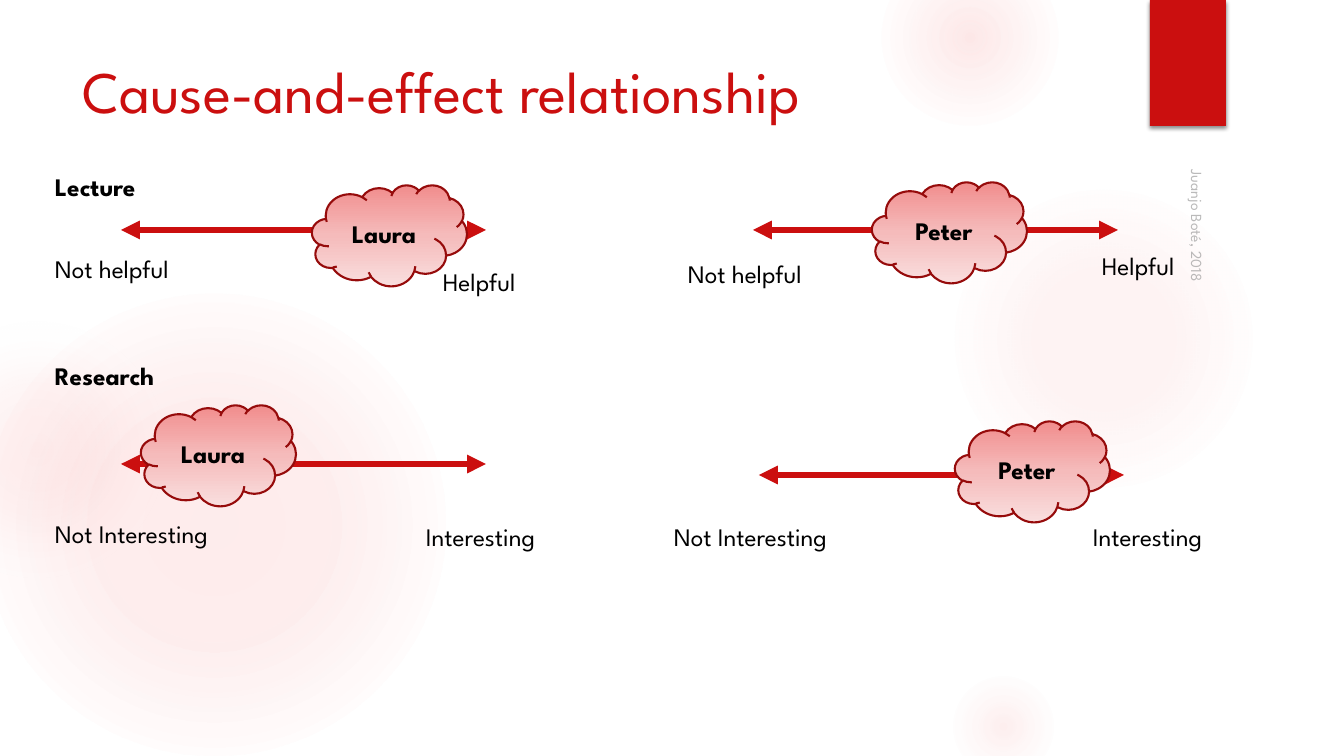
"""Build the cause-and-effect slide with its four opinion scales."""
from pptx import Presentation
from pptx.dml.color import RGBColor
from pptx.enum.shapes import MSO_CONNECTOR as Connector, MSO_SHAPE as Preset
from pptx.enum.text import MSO_ANCHOR as Anchor, MSO_AUTO_SIZE as AutoSize, PP_ALIGN as Align
from pptx.oxml import parse_xml
from pptx.oxml.ns import nsdecls, qn
from pptx.util import Emu, Pt

EMU_PER_PX = 914400 / 100.8
FONT = "League Spartan"
COLORS = {
    "accent": "CB0F0F", "outline": "960B0B", "text": "000000", "credit": "8C8C8C",
    "glow": "F35C5C", "haze": "F3F3F3",
    "cloud_top": "F18D8D", "cloud_middle": "F5BBBB", "cloud_bottom": "F9DEDE",
}
CLOUD_STOPS = [(0, "cloud_top", 100), (50, "cloud_middle", 100), (100, "cloud_bottom", 100)]
LINEAR = '<a:lin ang="5400000" scaled="0"/>'
RADIAL = '<a:path path="circle"><a:fillToRect l="50000" t="50000" r="50000" b="50000"/></a:path>'
GLOWS = [
    (-17, 294, 462, [(0, "glow", 11), (36, "glow", 10), (75, "glow", 0)]),
    (-93, 320, 260, [(0, "glow", 8), (36, "glow", 5), (71, "haze", 0)]),
    (949, 184, 310, [(0, "glow", 7), (36, "glow", 6), (69, "glow", 0)]),
    (882, -50, 176, [(0, "glow", 14), (36, "glow", 7), (73, "glow", 0)]),
    (949, 672, 109, [(0, "glow", 10), (31, "glow", 5), (66, "glow", 0)]),
]
SCALES = [
    (121, 230, "Laura", (312, 185), ("Not helpful", 45, 248), ("Helpful", 433, 261)),
    (753, 230, "Peter", (872, 182), ("Not helpful", 678, 253), ("Helpful", 1092, 245)),
    (121, 464, "Laura", (141, 405), ("Not Interesting", 45, 513), ("Interesting", 416, 516)),
    (759, 475, "Peter", (955, 421), ("Not Interesting", 664, 516), ("Interesting", 1083, 516)),
]
LABEL_WIDTHS = {"Not helpful": 155, "Helpful": 106, "Not Interesting": 199,
                "Interesting": 147, "Lecture": 114, "Research": 135}


def px(*lengths):
    """Turn pixel lengths into EMU."""
    return [Emu(round(length * EMU_PER_PX)) for length in lengths]


def color(name):
    """Look up a palette colour."""
    return RGBColor.from_string(COLORS[name])


def format_text(shape, size, color_name="text", bold=False, align=Align.LEFT):
    """Format the only paragraph of a shape."""
    paragraph = shape.text_frame.paragraphs[0]
    paragraph.alignment = align
    for run in paragraph.runs:
        run.font.name, run.font.size, run.font.bold = FONT, Pt(size), bold
        run.font.color.rgb = color(color_name)


def set_gradient(shape, stops, direction):
    """Fill a shape with a gradient of (percent, colour, opacity) stops."""
    stop_xml = "".join(
        f'<a:gs pos="{position * 1000}"><a:srgbClr val="{COLORS[name]}">'
        f'<a:alpha val="{opacity * 1000}"/></a:srgbClr></a:gs>'
        for position, name, opacity in stops)
    shape.fill.gradient()
    properties = shape._element.spPr
    properties.replace(properties.find(qn("a:gradFill")), parse_xml(
        f'<a:gradFill {nsdecls("a")} rotWithShape="1"><a:gsLst>{stop_xml}</a:gsLst>'
        f'{direction}</a:gradFill>'))


def add_preset(slide, preset, *box):
    """Add a preset shape without shadow or line."""
    shape = slide.shapes.add_shape(preset, *px(*box))
    shape.shadow.inherit = False
    shape.line.fill.background()
    return shape


def add_backdrop(slide):
    """Add the soft glows and the red tab."""
    for left, top, size, stops in GLOWS:
        set_gradient(add_preset(slide, Preset.OVAL, left, top, size, size), stops, RADIAL)
    tab = add_preset(slide, Preset.RECTANGLE, 1150, 0, 76, 126)
    tab.fill.solid()
    tab.fill.fore_color.rgb = color("accent")
    tab._element.spPr.find(qn("a:effectLst")).append(parse_xml(
        f'<a:outerShdw {nsdecls("a")} blurRad="38100" dist="25400" dir="5400000">'
        '<a:srgbClr val="000000"><a:alpha val="45000"/></a:srgbClr></a:outerShdw>'))


def add_title(slide, text):
    """Place the title in its placeholder."""
    title = slide.shapes.title
    title._element.getparent().append(title._element)
    title.left, title.top, title.width, title.height = px(72, 50, 1037, 154)
    title.text_frame.text = text
    title.text_frame.auto_size = AutoSize.NONE
    title.text_frame.vertical_anchor = Anchor.TOP
    format_text(title, 42, "accent")


def add_arrow(slide, left, y):
    """Add a horizontal double-headed arrow."""
    arrow = slide.shapes.add_connector(Connector.STRAIGHT, *px(left, y, left + 365, y))
    arrow.line.color.rgb = color("accent")
    arrow.line.width = Pt(4.5)
    for end in ("headEnd", "tailEnd"):
        arrow.line._get_or_add_ln().append(
            parse_xml(f'<a:{end} {nsdecls("a")} type="triangle"/>'))
    arrow._element.spPr.append(parse_xml(f'<a:effectLst {nsdecls("a")}/>'))


def add_label(slide, text, left, top, bold=False):
    """Add a one-line label."""
    label = slide.shapes.add_textbox(*px(left, top, LABEL_WIDTHS[text], 40))
    label.text_frame.text = text
    label.text_frame.word_wrap = False
    label.text_frame.auto_size = AutoSize.SHAPE_TO_FIT_TEXT
    format_text(label, 18, bold=bold)


def add_cloud(slide, name, left, top):
    """Add a cloud carrying a student's name."""
    cloud = add_preset(slide, Preset.CLOUD, left, top, 155, 101)
    set_gradient(cloud, CLOUD_STOPS, LINEAR)
    cloud.line.color.rgb = color("outline")
    cloud.line.width = Pt(1.5)
    cloud.text_frame.text = name
    cloud.text_frame.vertical_anchor = Anchor.MIDDLE
    format_text(cloud, 18, bold=True, align=Align.CENTER)


def add_credit(slide, text):
    """Add the translucent vertical credit line."""
    credit = slide.shapes.add_textbox(*px(987, 356, 425, 33))
    credit.rotation = 90
    credit.text_frame.text = text
    credit.text_frame.word_wrap = True
    credit.text_frame.vertical_anchor = Anchor.BOTTOM
    format_text(credit, 11, "credit")
    for fill in credit._element.iter(qn("a:srgbClr")):
        fill.append(parse_xml(f'<a:alpha {nsdecls("a")} val="60000"/>'))


def main():
    """Build and save the slide."""
    presentation = Presentation()
    presentation.slide_width, presentation.slide_height = px(1344, 756)
    slide = presentation.slides.add_slide(presentation.slide_layouts[5])
    add_backdrop(slide)
    add_title(slide, "Cause-and-effect relationship")
    for left, y, name, cloud_place, low_label, high_label in SCALES:
        add_arrow(slide, left, y)
        add_cloud(slide, name, *cloud_place)
        add_label(slide, *low_label)
        add_label(slide, *high_label)
    add_label(slide, "Lecture", 45, 166, bold=True)
    add_label(slide, "Research", 45, 355, bold=True)
    add_credit(slide, "Juanjo Boté, 2018")
    presentation.save("out.pptx")


if __name__ == "__main__":
    main()
